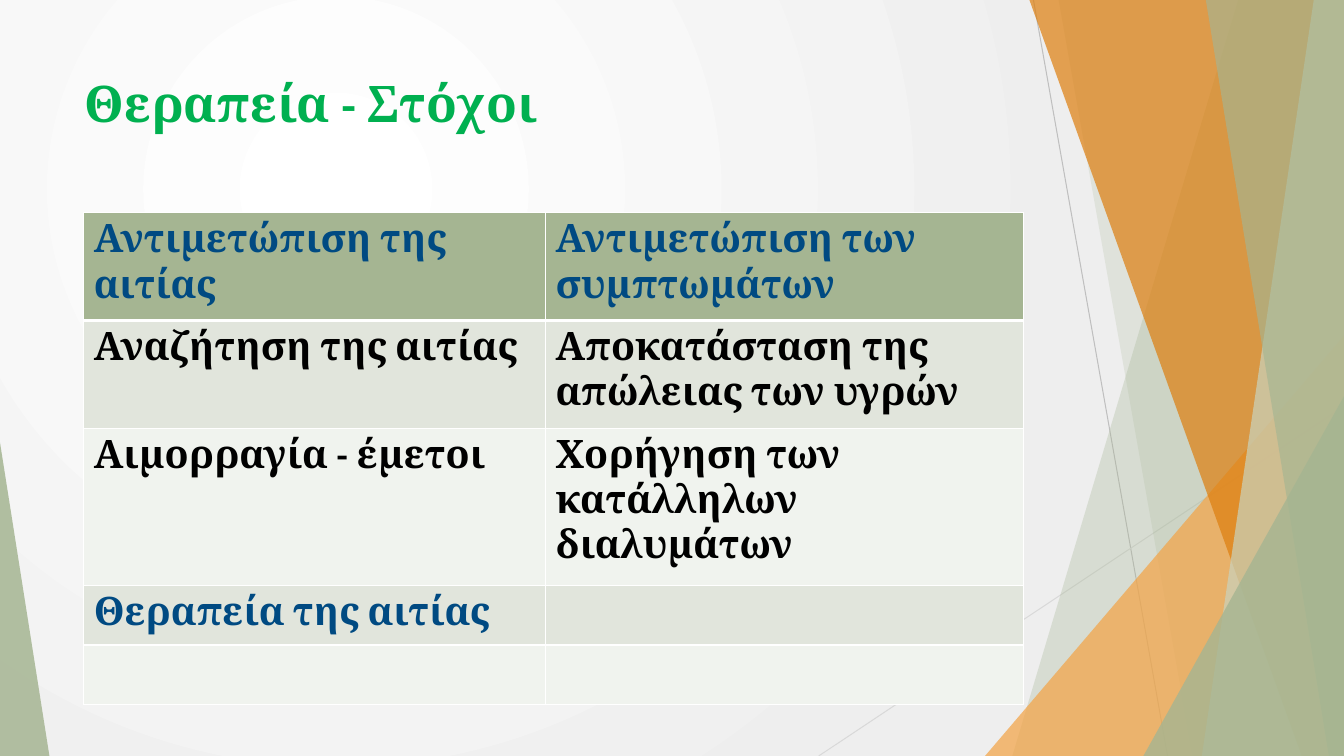
from lxml import etree
from pptx import Presentation
from pptx import util as u
from pptx.dml.color import RGBColor
from pptx.enum import shapes, text
from pptx.oxml.ns import qn

WIDTH, HEIGHT = 13.33, 7.5
FONT = "Cambria"

WHITE = RGBColor(0xFF, 0xFF, 0xFF)
BLACK = RGBColor(0x00, 0x00, 0x00)
PALE_GREY = RGBColor(0xEE, 0xEE, 0xEE)
LINE_DARK = RGBColor(0xBF, 0xBF, 0xBF)
LINE_LIGHT = RGBColor(0xD9, 0xD9, 0xD9)
GREEN = RGBColor(0x00, 0xB0, 0x50)
BLUE = RGBColor(0x00, 0x4A, 0x82)
SAGE = RGBColor(0xA5, 0xB5, 0x92)
PALE_SAGE = RGBColor(0xC9, 0xD3, 0xBE)
ORANGE = RGBColor(0xF3, 0xA4, 0x47)
DARK_ORANGE = RGBColor(0xDD, 0x7E, 0x0E)
BAND_DARK = RGBColor(0xE1, 0xE5, 0xDC)
BAND_LIGHT = RGBColor(0xF0, 0xF3, 0xEE)

COLUMNS = [4.58, 4.74]
# row height, fill, text colour, texts
ROWS = [
    (1.07, SAGE, BLUE, ["Αντιμετώπιση της αιτίας", "Αντιμετώπιση των συμπτωμάτων"]),
    (1.07, BAND_DARK, BLACK, ["Αναζήτηση της αιτίας", "Αποκατάσταση της απώλειας των υγρών"]),
    (1.56, BAND_LIGHT, BLACK, ["Αιμορραγία - έμετοι", "Χορήγηση των κατάλληλων διαλυμάτων"]),
    (0.59, BAND_DARK, BLUE, ["Θεραπεία της αιτίας", ""]),
    (0.59, BAND_LIGHT, BLACK, ["", ""]),
]


def write(tf, content, size, color, bold=True):
    tf.word_wrap = True
    p = tf.paragraphs[0]
    p.font.size = u.Pt(size)
    if not content:
        return
    r = p.add_run()
    r.text = content
    r.font.name, r.font.size, r.font.bold = FONT, u.Pt(size), bold
    r.font.color.rgb = color


def paint_background(s):
    """Radial gradient centred a quarter of the way into the slide."""
    fill = s.background.fill
    fill.gradient()
    for stop, position, color in zip(fill.gradient_stops, (0, 1), (WHITE, PALE_GREY)):
        stop.position, stop.color.rgb = position, color
    grad = s.element.find(".//" + qn("a:gradFill"))
    lin = grad.find(qn("a:lin"))
    radial = etree.Element(qn("a:path"), path="circle")
    etree.SubElement(radial, qn("a:fillToRect"), l="50000", t="50000", r="100000", b="100000")
    grad.replace(lin, radial)


def tint(sp, color, opacity):
    sp.shadow.inherit = False
    sp.line.fill.background()
    sp.fill.solid()
    sp.fill.fore_color.rgb = color
    clr = sp.element.spPr.find(".//" + qn("a:srgbClr"))
    etree.SubElement(clr, qn("a:alpha"), val=str(opacity * 1000))


def add_thin_line(s, start, end, color):
    ends = [u.Inches(v) for v in (*start, *end)]
    line = s.shapes.add_connector(shapes.MSO_CONNECTOR.STRAIGHT, *ends)
    line.line.color.rgb = color
    line.line.width = u.Pt(0.75)
    etree.SubElement(line.element.spPr, qn("a:effectLst"))


def add_band(s, top_x, bottom_x, color, opacity):
    """Full-height band from a slanted left side to the slide's right edge."""
    corners = [(top_x, 0), (WIDTH, 0), (WIDTH, HEIGHT), (bottom_x, HEIGHT)]
    points = [(u.Inches(x), u.Inches(y)) for x, y in corners]
    builder = s.shapes.build_freeform(*points[0])
    builder.add_line_segments(points[1:], close=True)
    tint(builder.convert_to_shape(), color, opacity)


def add_corner(s, left, width, height, apex, color, opacity):
    """Triangle standing on the slide's bottom edge; apex 0 is left, 1 right."""
    box = [u.Inches(v) for v in (left, HEIGHT - height, width, height)]
    sp = s.shapes.add_shape(shapes.MSO_SHAPE.ISOSCELES_TRIANGLE, *box)
    sp.adjustments[0] = apex
    tint(sp, color, opacity)


def add_facets(s):
    add_thin_line(s, (10.25, 0), (11.58, HEIGHT), LINE_DARK)
    add_thin_line(s, (WIDTH, 4.03), (8.12, HEIGHT), LINE_LIGHT)
    add_band(s, 12.28, 10.04, SAGE, 30)
    add_band(s, 10.5, 11.83, SAGE, 20)
    add_corner(s, 9.77, 3.56, 4.17, 1, ORANGE, 72)
    add_band(s, 10.21, 12.91, DARK_ORANGE, 70)
    add_band(s, 13.03, 11.92, PALE_SAGE, 70)
    add_band(s, 11.96, 13.18, SAGE, 65)
    add_corner(s, 11.34, 1.99, 3.57, 1, SAGE, 80)
    add_corner(s, 0, 0.49, 3.11, 0, SAGE, 85)


def add_title(s, left, top, width, height):
    sp = s.shapes.add_textbox(*[u.Inches(v) for v in (left, top, width, height)])
    sp.text_frame.vertical_anchor = text.MSO_ANCHOR.TOP
    write(sp.text_frame, "Θεραπεία - Στόχοι", 36, GREEN)


def set_borders(cell, **widths):
    """White borders; widths in points by side (L, R, T, B)."""
    tc_pr = cell._tc.get_or_add_tcPr()
    for i, side in enumerate("LRTB"):
        ln = etree.Element(qn("a:ln" + side), w=str(u.Pt(widths.get(side, 1))))
        fill = etree.SubElement(ln, qn("a:solidFill"))
        etree.SubElement(fill, qn("a:srgbClr"), val=str(WHITE))
        tc_pr.insert(i, ln)


def add_goals_table(s, left, top):
    size = sum(COLUMNS), sum(row[0] for row in ROWS)
    box = [u.Inches(v) for v in (left, top, *size)]
    table = s.shapes.add_table(len(ROWS), len(COLUMNS), *box).table
    for column, width in zip(table.columns, COLUMNS):
        column.width = u.Inches(width)
    for i, (height, fill, color, texts) in enumerate(ROWS):
        table.rows[i].height = u.Inches(height)
        for cell, content in zip(table.rows[i].cells, texts):
            cell.fill.solid()
            cell.fill.fore_color.rgb = fill
            set_borders(cell, T=3 if i == 1 else 1, B=3 if i == 0 else 1)
            write(cell.text_frame, content, 28, color)


def main():
    prs = Presentation()
    prs.slide_width, prs.slide_height = u.Inches(WIDTH), u.Inches(HEIGHT)
    s = prs.slides.add_slide(prs.slide_layouts[6])
    paint_background(s)
    add_facets(s)
    add_title(s, 0.74, 0.67, 9.4, 1.44)
    add_goals_table(s, 0.83, 2.11)
    prs.save("out.pptx")


if __name__ == "__main__":
    main()
